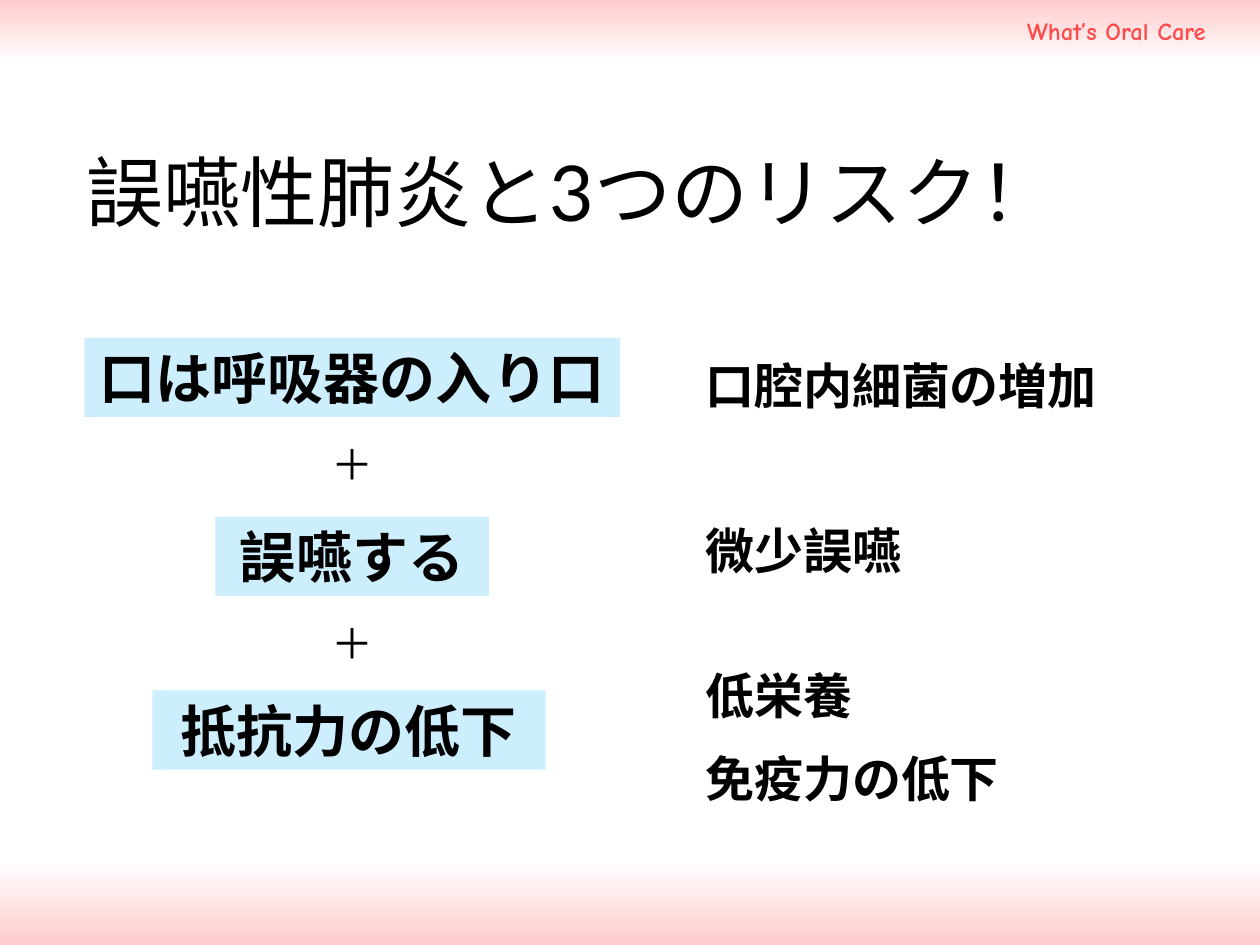
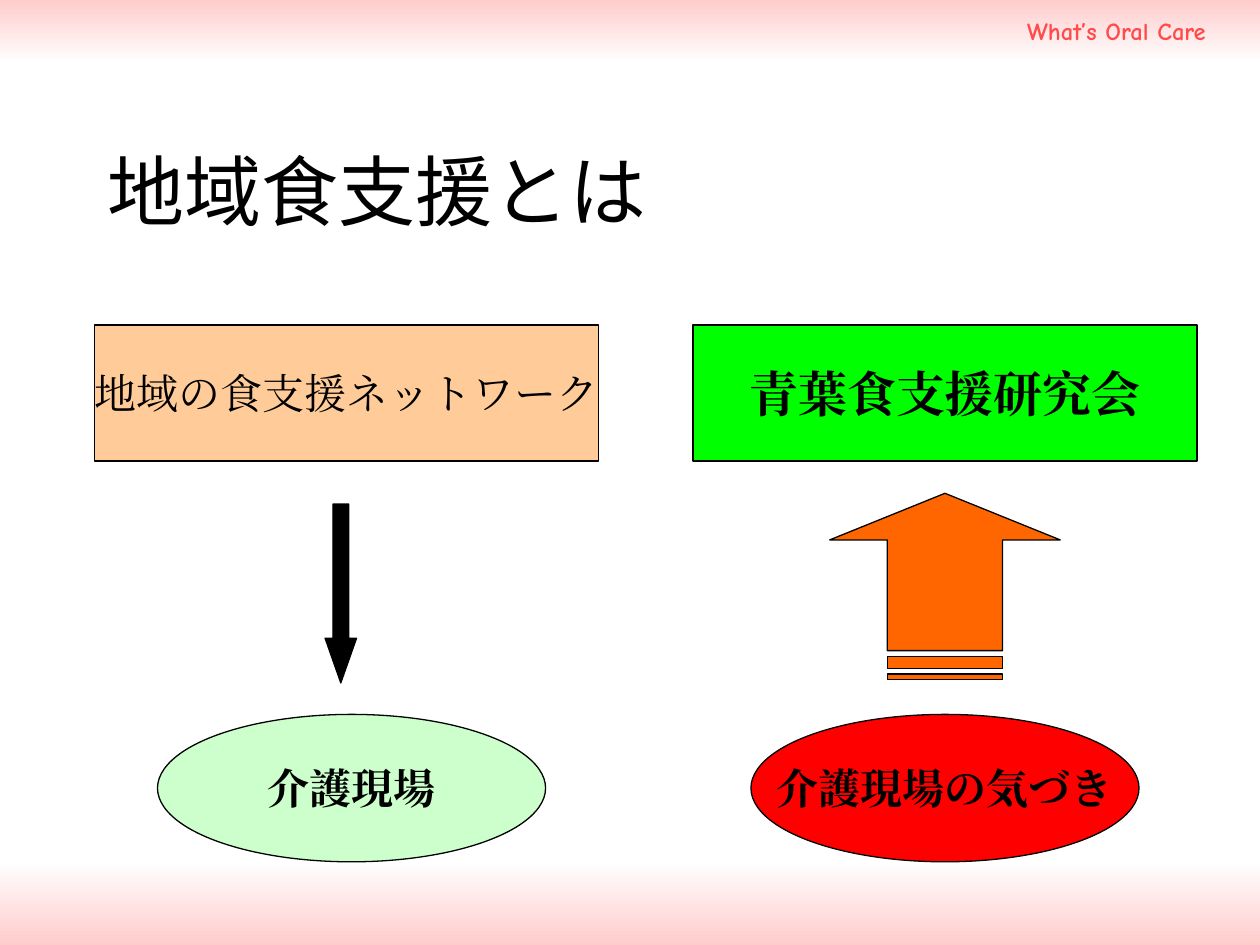
from lxml import etree
from pptx import Presentation
from pptx.dml.color import RGBColor
from pptx.enum.shapes import MSO_SHAPE
from pptx.enum.text import MSO_ANCHOR, MSO_AUTO_SIZE, PP_ALIGN
from pptx.oxml.ns import qn
from pptx.util import Inches, Pt

RECT, OVAL = MSO_SHAPE.RECTANGLE, MSO_SHAPE.OVAL
DOWN_ARROW, STRIPED_ARROW = MSO_SHAPE.DOWN_ARROW, MSO_SHAPE.STRIPED_RIGHT_ARROW
LEFT, CENTER, RIGHT = PP_ALIGN.LEFT, PP_ALIGN.CENTER, PP_ALIGN.RIGHT
TOP, MIDDLE, BOTTOM = MSO_ANCHOR.TOP, MSO_ANCHOR.MIDDLE, MSO_ANCHOR.BOTTOM
NO_FIT = MSO_AUTO_SIZE.NONE

BLACK, WHITE, PINK, CORAL = "000000", "FFFFFF", "FFCCCC", "FF4B4B"
SKY, PEACH, MINT = "CDEEFD", "FFCC99", "CCFFCC"
GREEN, RED, ORANGE = "00FF00", "FF0000", "FF6600"
SANS, SERIF, HAND = "Lato", "Times New Roman", "Comic Neue"


def rgb(color):
    return RGBColor.from_string(color)


def box(left, top, width, height):
    return Inches(left), Inches(top), Inches(width), Inches(height)


def set_text(tf, text, size, font=SANS, color=BLACK, bold=False,
             align=LEFT, anchor=TOP, wrap=True):
    tf.text = text
    tf.auto_size = NO_FIT
    tf.word_wrap = wrap
    tf.vertical_anchor = anchor
    for i, p in enumerate(tf.paragraphs):
        p.alignment = align
        p.space_before = Pt(size / 2 if i else 0)
        for r in p.runs:
            r.font.size = Pt(size)
            r.font.name = font
            r.font.bold = bold
            r.font.color.rgb = rgb(color)
            ea = etree.SubElement(r.font._element, qn("a:ea"))
            ea.set("typeface", font)


def add_text(slide, text, place, size, **style):
    sp = slide.shapes.add_textbox(*box(*place))
    set_text(sp.text_frame, text, size, **style)
    return sp


def add_shape(slide, kind, place, fill, outlined=True):
    sp = slide.shapes.add_shape(kind, *box(*place))
    sp.shadow.inherit = False
    sp.fill.solid()
    sp.fill.fore_color.rgb = rgb(fill)
    if outlined:
        sp.line.color.rgb = rgb(BLACK)
        sp.line.width = Pt(0.75)
    else:
        sp.line.fill.background()
    return sp


def add_node(slide, kind, place, fill, text, size=24, bold=True):
    sp = add_shape(slide, kind, place, fill)
    set_text(sp.text_frame, text, size, font=SERIF, bold=bold,
             align=CENTER, anchor=MIDDLE, wrap=False)


def add_band(slide, place, start, end):
    sp = add_shape(slide, RECT, place, start, outlined=False)
    sp.fill.gradient()
    sp.fill.gradient_angle = 270
    for stop, color in zip(sp.fill.gradient_stops, (start, end)):
        stop.color.rgb = rgb(color)
    return sp


def decorate_layout(slide):
    parts = [
        add_band(slide, (0, 0, 10, 0.5), PINK, WHITE),
        add_band(slide, (0, 6.83, 10, 0.67), WHITE, PINK),
        add_text(slide, "What’s Oral Care", (7.67, 0.08, 2, 0.33), 14,
                 font=HAND, color=CORAL, bold=True, align=RIGHT),
    ]
    for sp in parts:
        slide.slide_layout.shapes._spTree.append(sp._element)


def add_slide(prs, title, place):
    slide = prs.slides.add_slide(prs.slide_layouts[5])
    sp = slide.shapes.title
    sp.left, sp.top, sp.width, sp.height = box(*place)
    set_text(sp.text_frame, title, 44, anchor=BOTTOM)
    return slide


def add_risks(slide):
    risks = [
        ("口は呼吸器の入り口", 0.67, 2.68, 4.25),
        ("誤嚥する", 1.71, 4.1, 2.17),
        ("抵抗力の低下", 1.21, 5.48, 3.12),
    ]
    for text, left, top, width in risks:
        sp = add_shape(slide, RECT, (left, top, width, 0.63), SKY, outlined=False)
        set_text(sp.text_frame, text, 32, bold=True, align=CENTER)
    for top in (3.43, 4.85):
        add_text(slide, "＋", (2.42, top, 0.75, 0.5), 24, align=CENTER)
    causes = [
        ("口腔内細菌の増加", 2.77, 0.57),
        ("微少誤嚥", 4.08, 0.57),
        ("低栄養\n免疫力の低下", 5.23, 1.27),
    ]
    for text, top, height in causes:
        add_text(slide, text, (5.5, top, 3.33, height), 28, bold=True)


def add_support_flow(slide):
    add_node(slide, OVAL, (1.25, 5.67, 3.08, 1.17), MINT, "介護現場")
    add_node(slide, RECT, (0.75, 2.58, 4, 1.08), PEACH,
             "地域の食支援ネットワーク", bold=False)
    add_node(slide, OVAL, (5.96, 5.67, 3.08, 1.17), RED, "介護現場の気づき")
    add_node(slide, RECT, (5.5, 2.58, 4, 1.08), GREEN, "青葉食支援研究会", size=28)
    up = add_shape(slide, STRIPED_ARROW, (6.76, 3.74, 1.48, 1.83), ORANGE)
    up.rotation = 270
    up.adjustments[0], up.adjustments[1] = 0.5, 0.25
    down = add_shape(slide, DOWN_ARROW, (2.58, 4, 0.25, 1.42), BLACK)
    down.adjustments[0], down.adjustments[1] = 0.5, 1.42


def main():
    prs = Presentation()
    prs.slide_width, prs.slide_height = Inches(10), Inches(7.5)
    risks = add_slide(prs, "誤嚥性肺炎と3つのリスク！", (0.59, 0.68, 7.74, 1.25))
    decorate_layout(risks)
    add_risks(risks)
    support = add_slide(prs, "地域食支援とは", (0.75, 0.67, 9.25, 1.25))
    add_support_flow(support)
    prs.save("out.pptx")


if __name__ == "__main__":
    main()
